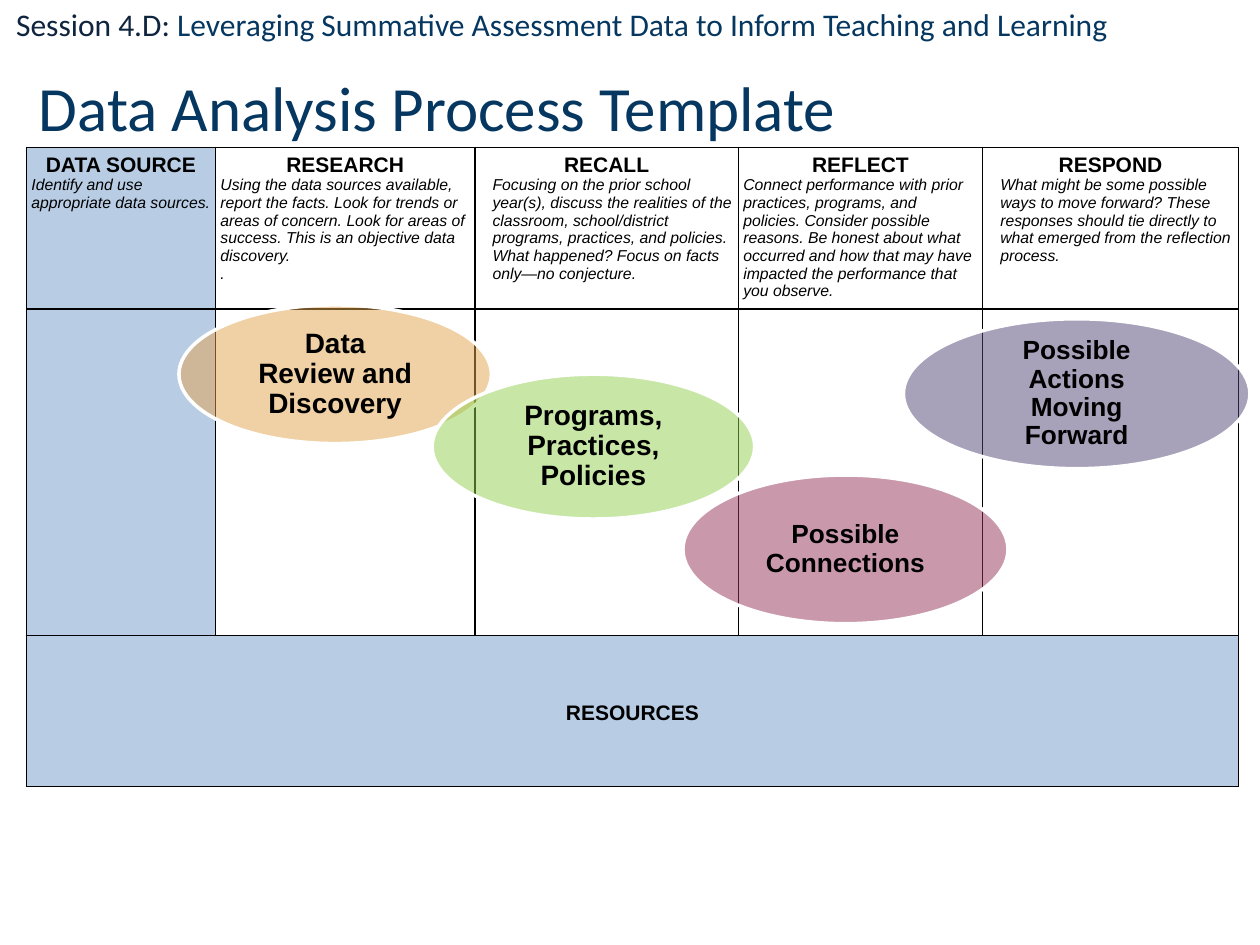
from lxml.etree import SubElement
from pptx import Presentation
from pptx.dml.color import RGBColor
from pptx.enum.shapes import MSO_SHAPE
from pptx.enum.text import MSO_ANCHOR, PP_ALIGN
from pptx.oxml.ns import qn
from pptx.util import Inches, Pt

COLORS = {
    "title": "063760", "session": "0F243E", "topic": "053760",
    "text": "000000", "border": "000000", "panel": "B8CCE4", "outline": "FFFFFF",
    "orange": "E2A44D", "green": "92D050", "plum": "943458", "violet": "514474",
}

presentation = Presentation()
presentation.slide_width, presentation.slide_height = Inches(10), Inches(7.5)
slide = presentation.slides.add_slide(presentation.slide_layouts[6])


def box(left, top, width, height):
    """Turn percentages of the slide's size into lengths."""
    across, down = presentation.slide_width / 100, presentation.slide_height / 100
    return [round(left * across), round(top * down), round(width * across), round(height * down)]


def style(run, size, color, name="Arial", bold=False, italic=False):
    run.font.size, run.font.name = Pt(size), name
    run.font.bold, run.font.italic = bold, italic
    run.font.color.rgb = RGBColor.from_string(COLORS[color])


# Title
title = slide.shapes.add_textbox(*box(2.1, 4.53, 90, 13.33))
title.text_frame.word_wrap = True
title.text_frame.vertical_anchor = MSO_ANCHOR.MIDDLE
title.text_frame.text = "Data Analysis Process Template"
style(title.text_frame.paragraphs[0].runs[0], 36, "title", "Calibri")

# Table: headings, instructions, work area, resources
columns = [
    ("DATA SOURCE", 15, 0, "Identify and use appropriate data sources."),
    ("RESEARCH", 20.6, 0, "Using the data sources available, report the facts. Look for trends or areas of "
     "concern. Look for areas of success. This is an objective data discovery.\n."),
    ("RECALL", 20.9, 0.1, "Focusing on the prior school year(s), discuss the realities of the classroom, "
     "school/district programs, practices, and policies. What happened? Focus on facts only—no conjecture."),
    ("REFLECT", 19.4, 0, "Connect performance with prior practices, programs, and policies. Consider possible "
     "reasons. Be honest about what occurred and how that may have impacted the performance that you observe."),
    ("RESPOND", 20.3, 0.1, "What might be some possible ways to move forward? These responses should tie "
     "directly to what emerged from the reflection process."),
]
row_heights = [2.93, 13.47, 34.53, 16]
table_width = sum(column[1] for column in columns)
frame = slide.shapes.add_table(len(row_heights), len(columns),
                               *box(2.1, 15.6, table_width, sum(row_heights)))
table = frame.table
table.first_row = table.horz_banding = False
for row, height in zip(table.rows, row_heights):
    row.height = box(0, 0, 0, height)[3]
for index, (heading, width, indent, instruction) in enumerate(columns):
    table.columns[index].width = box(0, 0, width, 0)[2]
    table.cell(0, index).text = heading
    table.cell(1, index).text = instruction
    for paragraph in table.cell(1, index).text_frame.paragraphs:
        paragraph._p.get_or_add_pPr().set("marL", str(Inches(indent)))
table.cell(3, 0).merge(table.cell(3, len(columns) - 1))
table.cell(3, 0).text = "RESOURCES"

# Cell fills, text and borders
anchors = [MSO_ANCHOR.BOTTOM, MSO_ANCHOR.TOP, MSO_ANCHOR.TOP, MSO_ANCHOR.MIDDLE]
for row_index, anchor in enumerate(anchors):
    for column_index in range(len(columns)):
        cell = table.cell(row_index, column_index)
        cell.vertical_anchor = anchor
        cell.margin_left = cell.margin_right = Inches(0.04)
        cell.margin_top = cell.margin_bottom = 0
        properties = cell._tc.get_or_add_tcPr()
        for side in ("lnL", "lnR", "lnT", "lnB"):
            line = SubElement(properties, qn("a:" + side), w=str(Pt(1)))
            if (row_index, side) in [(0, "lnB"), (1, "lnT")]:
                SubElement(line, qn("a:noFill"))
            else:
                fill = SubElement(line, qn("a:solidFill"))
                SubElement(fill, qn("a:srgbClr"), val=COLORS["border"])
        if column_index == 0 or row_index == 3:
            cell.fill.solid()
            cell.fill.fore_color.rgb = RGBColor.from_string(COLORS["panel"])
        else:
            cell.fill.background()
        is_label = row_index in (0, 3)
        for paragraph in cell.text_frame.paragraphs:
            if is_label:
                paragraph.alignment, paragraph.line_spacing = PP_ALIGN.CENTER, 1.15
            for run in paragraph.runs:
                style(run, 12 if is_label else 9, "text", bold=is_label, italic=not is_label)

# Overlapping stage ovals
ovals = [
    ("Data Review and Discovery", "orange", 16, (14.2, 32.27, 24.8, 14.67)),
    ("Programs, Practices, Policies", "green", 16, (34.3, 39.6, 25.6, 15.33)),
    ("Possible Connections", "plum", 15, (54.2, 50.27, 25.8, 15.73)),
    ("Possible Actions Moving Forward", "violet", 15, (71.7, 33.73, 27.5, 15.87)),
]
for label, color, size, place in ovals:
    oval = slide.shapes.add_shape(MSO_SHAPE.OVAL, *box(*place))
    oval.shadow.inherit = False
    oval.fill.solid()
    oval.fill.fore_color.rgb = RGBColor.from_string(COLORS[color])
    fill_color = oval.fill._xPr.find(qn("a:solidFill"))[0]
    SubElement(fill_color, qn("a:alpha"), val="50000")
    oval.line.color.rgb = RGBColor.from_string(COLORS["outline"])
    oval.line.width = Pt(2)
    text_frame = oval.text_frame
    text_frame.word_wrap = True
    text_frame.vertical_anchor = MSO_ANCHOR.MIDDLE
    text_frame.margin_left = text_frame.margin_right = Inches(0.24)
    text_frame.margin_top = text_frame.margin_bottom = Inches(0.1)
    text_frame.text = label
    paragraph = text_frame.paragraphs[0]
    paragraph.alignment, paragraph.line_spacing = PP_ALIGN.CENTER, 0.9
    style(paragraph.runs[0], size, "text", bold=True)

# Session line
session = slide.shapes.add_textbox(*box(0.3, -0.13, 99.7, 5.33))
session.text_frame.word_wrap = True
paragraph = session.text_frame.paragraphs[0]
for text, color in [("Session 4.D: ", "session"),
                    ("Leveraging Summative Assessment Data to Inform Teaching and Learning", "topic")]:
    run = paragraph.add_run()
    run.text = text
    style(run, 18, color, "Calibri")

presentation.save("out.pptx")
